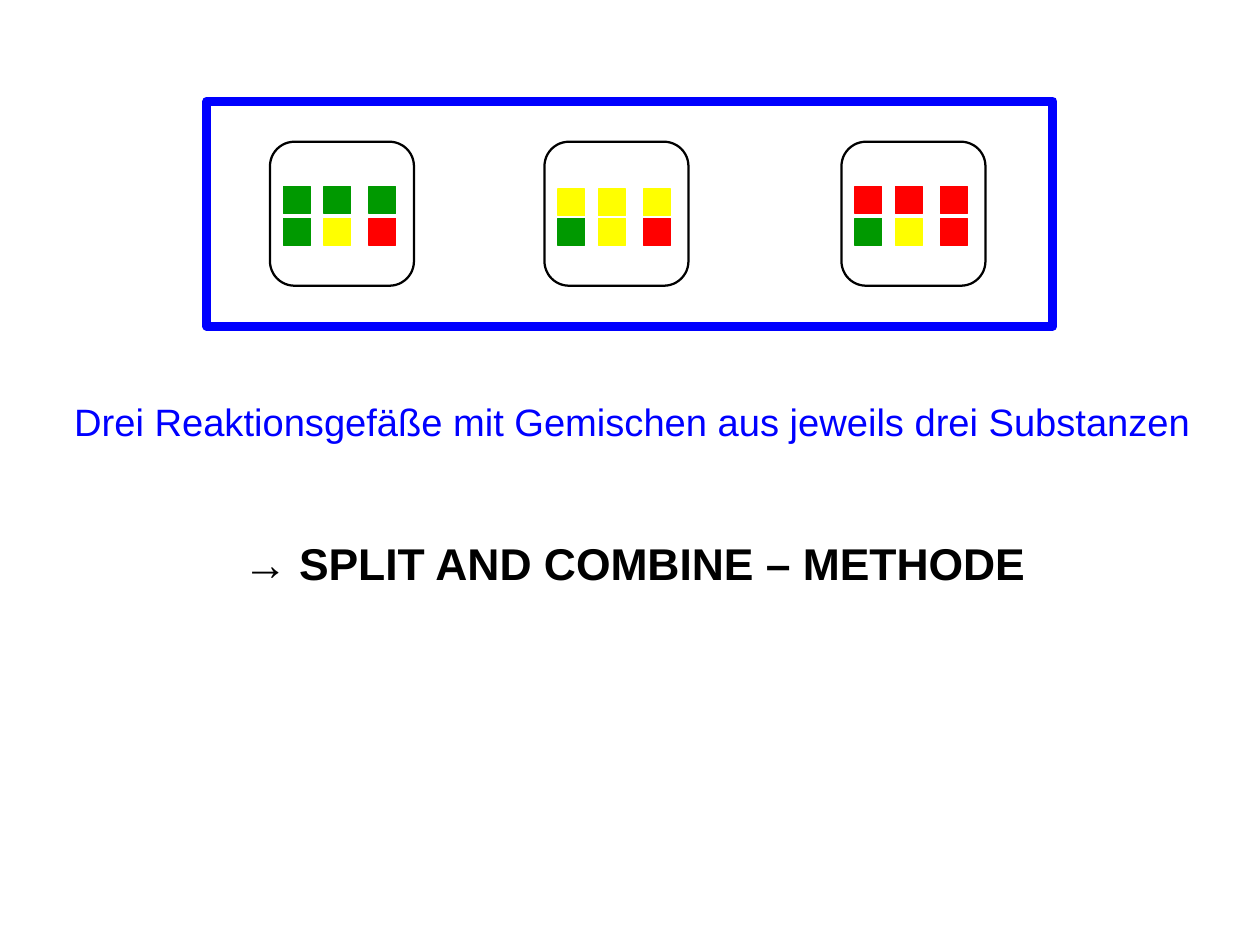
from pptx import Presentation
from pptx.dml.color import RGBColor
from pptx.enum.shapes import MSO_SHAPE
from pptx.enum.text import MSO_AUTO_SIZE
from pptx.oxml.ns import qn
from pptx.util import Cm, Pt
from lxml import etree

RECTANGLE = MSO_SHAPE.RECTANGLE
ROUNDED = MSO_SHAPE.ROUNDED_RECTANGLE
GROW = MSO_AUTO_SIZE.SHAPE_TO_FIT_TEXT

COLOURS = {
    "white": "FFFFFF",
    "black": "000000",
    "blue": "0000FF",
    "green": "009900",
    "yellow": "FFFF00",
    "red": "FF0000",
}
SUBSTANCES = ("green", "yellow", "red")
VESSELS = (("green", 6, 4.15), ("yellow", 12.1, 4.2), ("red", 18.7, 4.15))
VESSEL_TOP, VESSEL_SIZE = 3.15, 3.2
BLOCK_OFFSETS = (0.3, 1.2, 2.2)
BLOCK_SIZE, LOWER_ROW_TOP = 0.6, 4.85


class ReactionSlide:
    """Draws the vessels, blocks and captions of one slide in a shared style."""

    def __init__(self, slide, font="Arial"):
        self.shapes = slide.shapes
        self.font = font

    def colour(self, name):
        return RGBColor.from_string(COLOURS[name])

    def outline(self, kind, left, top, width, height, fill, line, weight):
        shape = self.shapes.add_shape(kind, Cm(left), Cm(top), Cm(width), Cm(height))
        shape.shadow.inherit = False
        if fill:
            shape.fill.solid()
            shape.fill.fore_color.rgb = self.colour(fill)
        else:
            shape.fill.background()
        shape.line.color.rgb = self.colour(line)
        shape.line.width = Pt(weight)
        return shape

    def vessel(self, left):
        body = self.outline(ROUNDED, left, VESSEL_TOP, VESSEL_SIZE, VESSEL_SIZE,
                            "white", "black", 1.42)
        body.adjustments[0] = 0.17

    def block_row(self, vessel_left, top, substances):
        for offset, substance in zip(BLOCK_OFFSETS, substances):
            self.outline(RECTANGLE, vessel_left + offset, top, BLOCK_SIZE, BLOCK_SIZE,
                         substance, substance, 0)

    def frame(self, left, top, width, height):
        border = self.outline(RECTANGLE, left, top, width, height, None, "blue", 5.67)
        etree.SubElement(border.line._get_or_add_ln(), qn("a:round"))

    def caption(self, left, top, width, height, runs, colour, bold=False):
        box = self.shapes.add_textbox(Cm(left), Cm(top), Cm(width), Cm(height))
        box.text_frame.word_wrap = False
        box.text_frame.auto_size = GROW
        paragraph = box.text_frame.paragraphs[0]
        for text, size in runs:
            run = paragraph.add_run()
            run.text = text
            run.font.name = self.font
            run.font.size = Pt(size)
            run.font.bold = bold
            run.font.color.rgb = self.colour(colour)


def main():
    presentation = Presentation()
    presentation.slide_width = Cm(28)
    presentation.slide_height = Cm(21)
    page = ReactionSlide(presentation.slides.add_slide(presentation.slide_layouts[6]))

    for added_substance, left, upper_row_top in VESSELS:
        page.vessel(left)
        page.block_row(left, LOWER_ROW_TOP, SUBSTANCES)
        page.block_row(left, upper_row_top, [added_substance] * len(SUBSTANCES))
    page.frame(4.6, 2.25, 18.8, 5)

    page.caption(1.4, 8.74, 25.55, 1.24,
                 [("Drei Reaktionsgefäße mit Gemischen aus jeweils drei Substanzen", 24)],
                 "blue")
    page.caption(4.9, 11.79, 18.34, 1.4,
                 [(" ", 26), ("→", 28), (" ", 26), ("SPLIT AND COMBINE – METHODE", 28)],
                 "black", bold=True)
    presentation.save("out.pptx")


if __name__ == "__main__":
    main()
